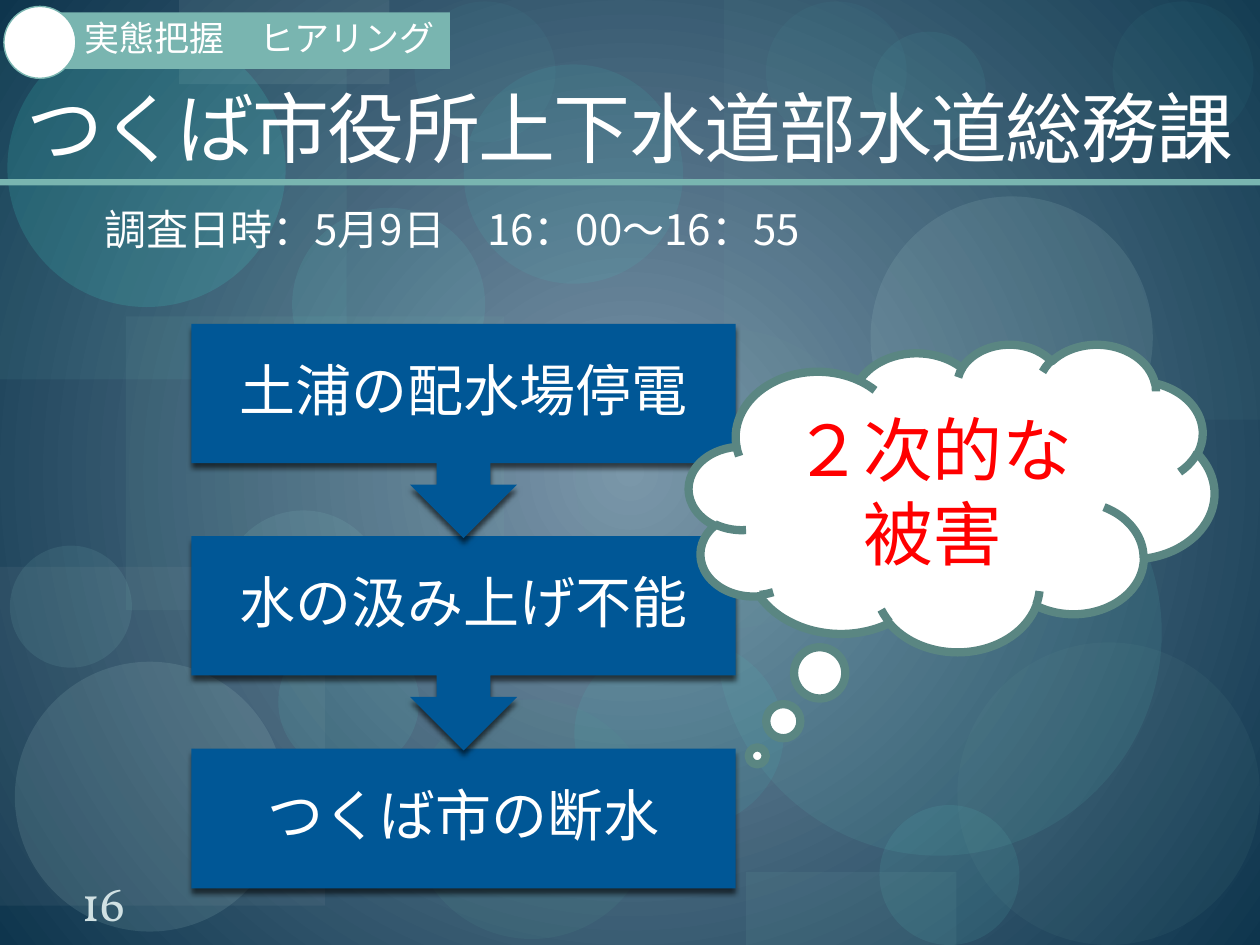
from lxml import etree
from pptx import Presentation
from pptx.dml.color import RGBColor
from pptx.enum.shapes import MSO_SHAPE
from pptx.enum.text import MSO_ANCHOR, MSO_AUTO_SIZE, PP_ALIGN
from pptx.oxml.ns import qn
from pptx.util import Cm, Pt

RECTANGLE, OVAL = MSO_SHAPE.RECTANGLE, MSO_SHAPE.OVAL
ARROW_BOX, CLOUD = MSO_SHAPE.DOWN_ARROW_CALLOUT, MSO_SHAPE.CLOUD_CALLOUT
LEFT, CENTER = PP_ALIGN.LEFT, PP_ALIGN.CENTER
MIDDLE, BOTTOM = MSO_ANCHOR.MIDDLE, MSO_ANCHOR.BOTTOM
NO_AUTO_SIZE = MSO_AUTO_SIZE.NONE

WHITE = RGBColor(0xFF, 0xFF, 0xFF)
RED = RGBColor(0xFF, 0x00, 0x00)
BLUE = RGBColor(0x00, 0x57, 0x96)
TEAL = RGBColor(0x79, 0xB5, 0xB0)
DARK_TEAL = RGBColor(0x5A, 0x86, 0x82)
PALE_BLUE = RGBColor(0xD1, 0xE1, 0xE3)
GLOW = RGBColor(0x7B, 0x96, 0xAA)
NAVY = RGBColor(0x0E, 0x35, 0x4D)
GREY = RGBColor(0xB2, 0xB7, 0xBA)
SAGE = RGBColor(0x70, 0xA3, 0x9E)
DEEP_TEAL = RGBColor(0x54, 0x97, 0x91)
MIST = RGBColor(0xC1, 0xE8, 0xE4)
AQUA = RGBColor(0x65, 0xE8, 0xDC)
TURQUOISE = RGBColor(0x44, 0xEA, 0xDC)
MINT = RGBColor(0x77, 0xD6, 0xCE)
SILVER = RGBColor(0xBE, 0xD7, 0xD4)
LAGOON = RGBColor(0x97, 0xDC, 0xD6)
SEA = RGBColor(0x61, 0xCD, 0xC4)

SANS, SERIF = "Noto Sans CJK JP", "Vollkorn"

# Backdrop: kind, left, top, width, height (cm), colour, opacity (%)
BACKDROP = [
    (RECTANGLE, 2.54, 6.38, 7.62, 5.92, TEAL, 9),
    (OVAL, 8.28, 14.1, 4.88, 4.83, DEEP_TEAL, 13),
    (RECTANGLE, 14.6, 0, 10.8, 8.46, TEAL, 6),
    (RECTANGLE, 0, 11.43, 6.55, 6.83, GREY, 8),
    (OVAL, 11.61, 6.63, 6.05, 6.05, SAGE, 8),
    (OVAL, 17.73, 16.23, 2.82, 2.82, AQUA, 9),
    (OVAL, 17.55, 3.96, 5.69, 5.69, MIST, 11),
    (OVAL, 0.3, 13.34, 5.44, 5.44, MIST, 12),
    (OVAL, 5.61, 12.73, 2.84, 2.84, AQUA, 9),
    (OVAL, 11.58, 12.85, 4.22, 3.89, TURQUOISE, 8),
    (RECTANGLE, 0, 1.02, 6.99, 6.63, MINT, 7),
    (RECTANGLE, 3.61, 0, 4.24, 1.7, SILVER, 10),
    (OVAL, 0.15, 0.58, 5.61, 5.61, TURQUOISE, 15),
    (OVAL, 0.2, 11, 2.46, 2.46, LAGOON, 10),
    (OVAL, 5.89, 4.19, 3.89, 3.89, AQUA, 9),
    (OVAL, 9.35, 1.3, 4.42, 4.42, TURQUOISE, 8),
    (OVAL, 14.43, 8.26, 8.99, 8.99, SEA, 10),
    (OVAL, 15.44, 0.03, 2.84, 2.84, AQUA, 4),
    (OVAL, 19.3, 12.95, 6.1, 6.1, SAGE, 8),
    (OVAL, 4.45, 10.29, 3.33, 3.33, LAGOON, 10),
    (OVAL, 17.58, 0.64, 2.29, 2.29, AQUA, 6),
    (OVAL, 22.43, 0.03, 2.84, 2.84, AQUA, 4),
    (RECTANGLE, 15.04, 17.58, 4.24, 1.47, TEAL, 10),
    (OVAL, 8.36, 0.03, 2.84, 2.84, AQUA, 4),
]

STEPS = ["土浦の配水場停電", "水の汲み上げ不能", "つくば市の断水"]
STEP_LEFT, STEP_TOP, STEP_PITCH = 3.86, 6.53, 4.28
STEP_WIDTH, BOX_HEIGHT, ARROW_BOX_HEIGHT = 10.97, 2.82, 4.32


class SlideBuilder:
    def __init__(self, presentation):
        self.slide = presentation.slides.add_slide(presentation.slide_layouts[5])

    def background(self, inner, outer):
        fill = self.slide.background.fill
        fill.gradient()
        for stop, color in zip(fill.gradient_stops, (inner, outer)):
            stop.color.rgb = color
        gradient = self.slide.element.find(".//" + qn("a:gradFill"))
        gradient.remove(gradient.find(qn("a:lin")))
        radial = etree.SubElement(gradient, qn("a:path"), path="circle")
        etree.SubElement(radial, qn("a:fillToRect"),
                         dict.fromkeys("ltrb", "50000"))

    def set_text(self, shape, text, size, color=WHITE, font=SERIF, align=CENTER,
                 anchor=MIDDLE, margins=(0.25, 0.13, 0.25, 0.13)):
        frame = shape.text_frame
        frame.word_wrap = True
        frame.auto_size = NO_AUTO_SIZE
        frame.vertical_anchor = anchor
        (frame.margin_left, frame.margin_top,
         frame.margin_right, frame.margin_bottom) = map(Cm, margins)
        frame.text = text
        paragraph = frame.paragraphs[0]
        paragraph.alignment = align
        paragraph.font.size = Pt(size)
        paragraph.font.color.rgb = color
        paragraph.font.name = font
        properties = paragraph._p.pPr.find(qn("a:defRPr"))
        etree.SubElement(properties, qn("a:ea"), typeface=SANS)
        return paragraph

    def title(self, box, text, size):
        title = self.slide.shapes.title
        title.left, title.top, title.width, title.height = map(Cm, box)
        self.slide.shapes._spTree.append(title._element)  # above the backdrop
        paragraph = self.set_text(title, text, size, font=SANS, anchor=BOTTOM)
        paragraph.runs[0]._r.get_or_add_rPr().set("spc", "-100")

    def text(self, box, text, size, **style):
        text_box = self.slide.shapes.add_textbox(*map(Cm, box))
        self.set_text(text_box, text, size, **style)

    def shape(self, kind, box, color, opacity=100, line=None, line_width=1):
        shape = self.slide.shapes.add_shape(kind, *map(Cm, box))
        shape.shadow.inherit = False
        shape.fill.solid()
        shape.fill.fore_color.rgb = color
        if opacity < 100:
            fill_color = shape._element.spPr.find(".//" + qn("a:srgbClr"))
            etree.SubElement(fill_color, qn("a:alpha"), val=str(opacity * 1000))
        if line is None:
            shape.line.fill.background()
        else:
            shape.line.color.rgb = line
            shape.line.width = Pt(line_width)
        return shape

    def step(self, kind, box, text):
        shape = self.shape(kind, box, BLUE)
        effects = shape._element.spPr.find(qn("a:effectLst"))
        shadow = etree.SubElement(effects, qn("a:outerShdw"), blurRad="38100",
                                  dist="38100", dir="5400000", rotWithShape="0")
        black = etree.SubElement(shadow, qn("a:srgbClr"), val="000000")
        etree.SubElement(black, qn("a:alpha"), val="60000")
        paragraph = self.set_text(shape, text, 32, margins=(0.64,) * 4)
        paragraph.line_spacing = 0.9


def main():
    presentation = Presentation()
    presentation.slide_width, presentation.slide_height = Cm(25.4), Cm(19.05)
    builder = SlideBuilder(presentation)

    # Backdrop and title rule
    builder.background(GLOW, NAVY)
    for kind, left, top, width, height, color, opacity in BACKDROP:
        builder.shape(kind, (left, top, width, height), color, opacity)
    builder.shape(RECTANGLE, (0, 3.61, 25.4, 0.13), TEAL)

    # Title and survey date
    builder.title((0, 0.43, 25.4, 3.18), "つくば市役所上下水道部水道総務課", 44)
    builder.text((1.86, 3.68, 22.5, 1.88), "調査日時：5月9日　16：00～16：55", 24,
                 font=SANS, align=LEFT)

    # Chain of events, last step at the back
    for index in reversed(range(len(STEPS))):
        last = index == len(STEPS) - 1
        height = BOX_HEIGHT if last else ARROW_BOX_HEIGHT
        builder.step(RECTANGLE if last else ARROW_BOX,
                     (STEP_LEFT, STEP_TOP + index * STEP_PITCH, STEP_WIDTH, height),
                     STEPS[index])

    # Thought cloud
    cloud = builder.shape(CLOUD, (13.89, 6.93, 10.59, 6.2), WHITE,
                          line=DARK_TEAL, line_width=4.72)
    cloud.adjustments[0], cloud.adjustments[1] = -0.37, 0.84
    builder.set_text(cloud, "２次的な被害", 40, RED)

    # Section tag
    tag = builder.shape(RECTANGLE, (0.79, 0.25, 8.28, 1.14), TEAL)
    paragraph = builder.set_text(tag, "実態把握　ヒアリング", 20, align=LEFT,
                                 margins=(0.91, 0.15, 0, 0.15))
    paragraph.line_spacing = 0.9
    builder.shape(OVAL, (0.08, 0.13, 1.45, 1.45), WHITE, line=TEAL, line_width=0.79)

    # Page number
    builder.text((0.43, 17.55, 3.3, 1.27), "16", 28, color=PALE_BLUE,
                 margins=(0,) * 4)

    presentation.save("out.pptx")


if __name__ == "__main__":
    main()
